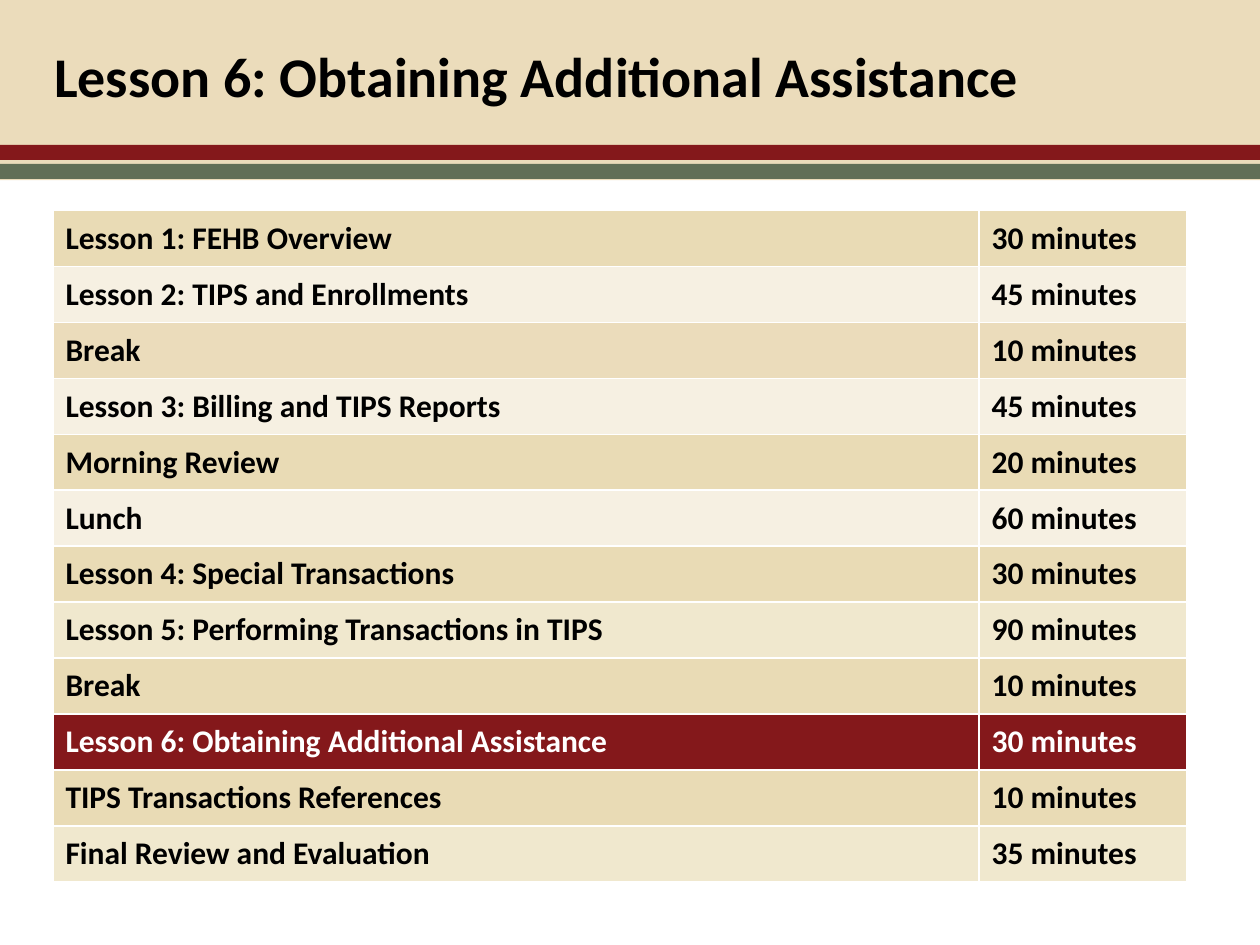
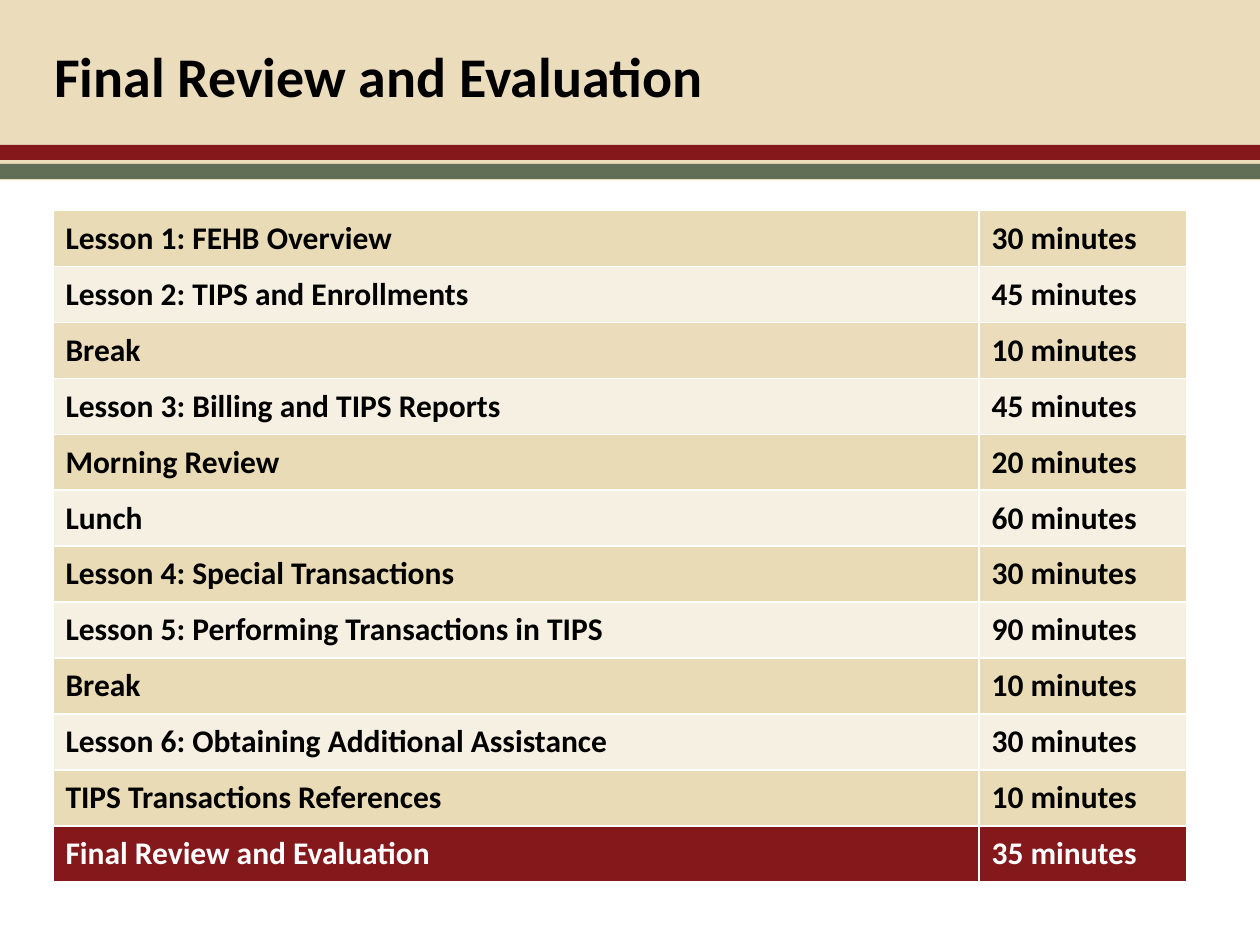
from pptx import Presentation, util as u
from pptx.dml.color import RGBColor
from pptx.enum import shapes, text

HUES = {
    "band": "EBDCBB", "red": "84181B", "green": "616F57",
    "sand": "E9DBB5", "cream": "F6F0E2", "straw": "F0E8CE",
    "black": "000000", "white": "FFFFFF",
}
FONT = "Calibri"
WIDE, HIGH = u.Inches(10), u.Inches(7.5)

BANDS = [  # top, height, colour
    (0, 1.43, "band"),
    (1.15, 0.12, "red"),
    (1.3, 0.12, "green"),
]
AGENDA = [
    ("Lesson 1: FEHB Overview", 30),
    ("Lesson 2: TIPS and Enrollments", 45),
    ("Break", 10),
    ("Lesson 3: Billing and TIPS Reports", 45),
    ("Morning Review", 20),
    ("Lunch", 60),
    ("Lesson 4: Special Transactions", 30),
    ("Lesson 5: Performing Transactions in TIPS", 90),
    ("Break", 10),
    ("Lesson 6: Obtaining Additional Assistance", 30),
    ("TIPS Transactions References", 10),
    ("Final Review and Evaluation", 35),
]
COLS = [7.35, 1.65]
TABLE_HIGH = u.Inches(5.33)
# Each slide is titled after its current agenda row; some rows have a special fill.
SLIDES = [
    (9, {2: "band", 7: "straw", 11: "straw"}),
    (11, {2: "band"}),
]


def paint(fill, hue):
    fill.solid()
    fill.fore_color.rgb = RGBColor.from_string(HUES[hue])


def style(para, size, hue):
    para.font.name = FONT
    para.font.size = u.Pt(size)
    para.font.bold = True
    para.font.color.rgb = RGBColor.from_string(HUES[hue])


deck = Presentation()
deck.slide_width, deck.slide_height = WIDE, HIGH
layout = deck.slide_layouts.get_by_name("Title Only")

for now, extra in SLIDES:
    slide = deck.slides.add_slide(layout)

    for top, high, hue in BANDS:
        band = slide.shapes.add_shape(
            shapes.MSO_SHAPE.RECTANGLE, 0, u.Inches(top), WIDE, u.Inches(high))
        band.shadow.inherit = False
        paint(band.fill, hue)
        band.line.fill.background()

    title = slide.shapes.title
    slide.shapes.element.append(title.element)  # in front of the bands
    title.left, title.top = u.Inches(0.33), 0
    title.width, title.height = u.Inches(8.2), u.Inches(1.2)
    frame = title.text_frame
    frame.text = AGENDA[now][0]
    frame.auto_size = text.MSO_AUTO_SIZE.NONE
    frame.vertical_anchor = text.MSO_ANCHOR.MIDDLE
    frame.paragraphs[0].alignment = text.PP_ALIGN.LEFT
    style(frame.paragraphs[0], 32, "black")

    table = slide.shapes.add_table(
        len(AGENDA), len(COLS), u.Inches(0.42), u.Inches(1.67),
        u.Inches(sum(COLS)), TABLE_HIGH).table
    for col, wide in zip(table.columns, COLS):
        col.width = u.Inches(wide)

    for row, (topic, mins) in enumerate(AGENDA):
        table.rows[row].height = TABLE_HIGH // len(AGENDA)
        hue = extra.get(row, ("sand", "cream")[row % 2])
        if row == now:
            hue = "red"
        for col, words in enumerate((topic, f"{mins} minutes")):
            cell = table.cell(row, col)
            cell.text = words
            cell.vertical_anchor = text.MSO_ANCHOR.MIDDLE
            paint(cell.fill, hue)
            style(cell.text_frame.paragraphs[0], 18,
                  "white" if row == now else "black")

deck.save("out.pptx")
